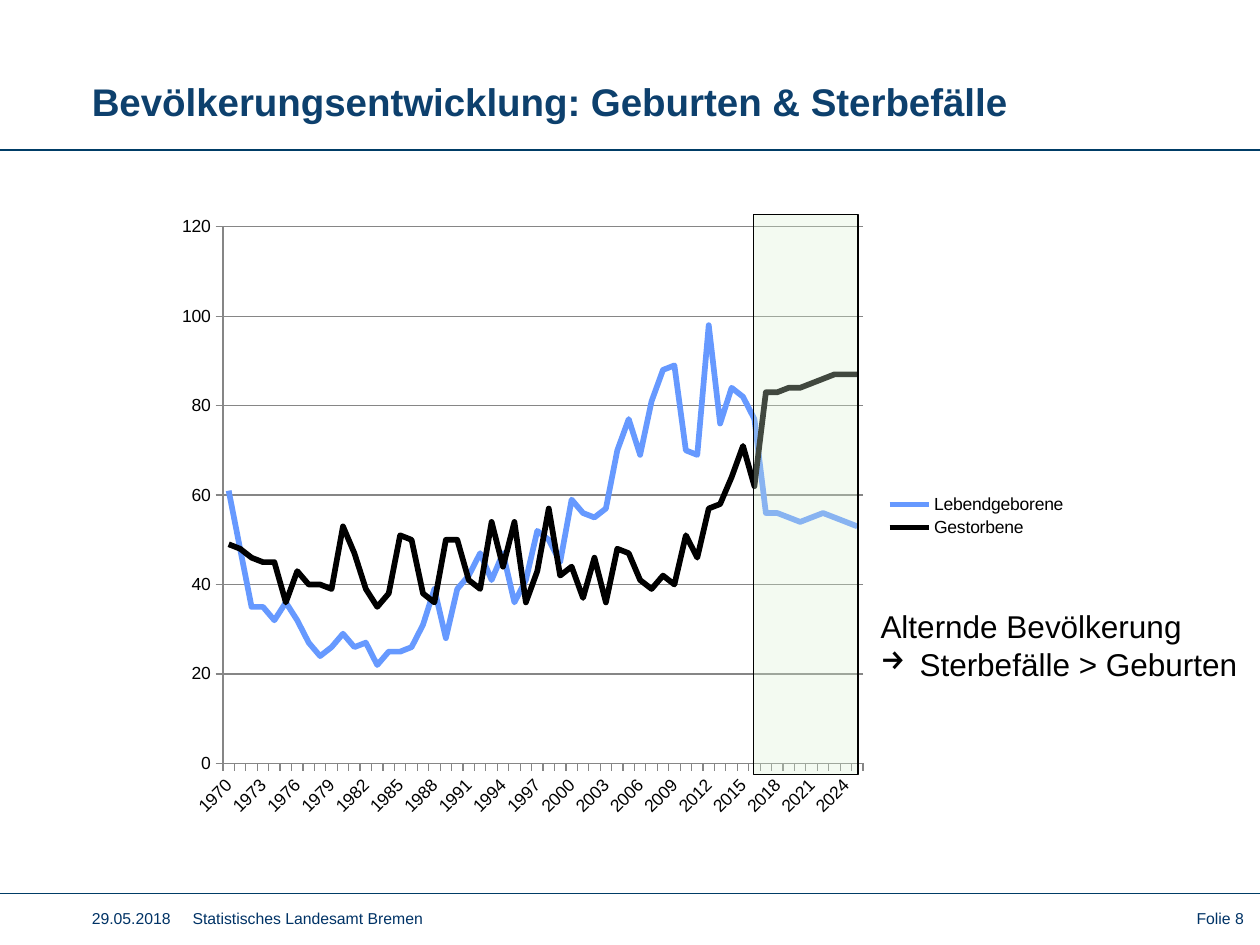
import pptx
import pptx.chart.data
import pptx.dml.color
import pptx.enum.chart
import pptx.enum.shapes
import pptx.enum.text
import pptx.oxml
import pptx.oxml.ns
import pptx.oxml.xmlchemy
import pptx.util

Inches, Pt = pptx.util.Inches, pptx.util.Pt
ALIGN, ANCHOR = pptx.enum.text.PP_ALIGN, pptx.enum.text.MSO_ANCHOR
qn, new_element = pptx.oxml.ns.qn, pptx.oxml.xmlchemy.OxmlElement

THEME = {
    "font": "Arial",
    "title": "0D406D", "rule": "003D66", "footer": "003366",
    "text": "000000", "grid": "868686", "forecast": "D8F0D2",
    "title_size": 22, "note_size": 18, "chart_size": 10, "footer_size": 9,
    "thin": 0.75, "thick": 3.25,
}
TITLE_FORMAT = {"size": THEME["title_size"], "color": THEME["title"], "bold": True}
NOTE_FORMAT = {"size": THEME["note_size"], "color": THEME["text"]}
CHART_FORMAT = {"size": THEME["chart_size"], "color": THEME["text"]}
FOOTER_FORMAT = {"size": THEME["footer_size"], "color": THEME["footer"]}

TITLE = "Bevölkerungsentwicklung: Geburten & Sterbefälle"
FOOTERS = [  # text, box, alignment
    ("29.05.2018", (0.63, 7.16, 0.85, 0.28), ALIGN.LEFT),
    ("Statistisches Landesamt Bremen", (1.43, 7.16, 5.26, 0.28), ALIGN.LEFT),
    ("Folie 8", (9.1, 7.16, 0.87, 0.28), ALIGN.RIGHT),
]
NOTE = ["Alternde Bevölkerung", "Sterbefälle > Geburten"]
RULE_HEIGHTS = [1.19, 7.09]

YEARS = range(1970, 2026)
SERIES = [  # name, colour, values per year
    ("Lebendgeborene", "6699FF", [
        61, 48, 35, 35, 32, 36, 32, 27, 24, 26, 29, 26, 27, 22, 25, 25, 26, 31, 39,
        28, 39, 42, 47, 41, 47, 36, 41, 52, 50, 45, 59, 56, 55, 57, 70, 77, 69, 81,
        88, 89, 70, 69, 98, 76, 84, 82, 77, 56, 56, 55, 54, 55, 56, 55, 54, 53]),
    ("Gestorbene", "000000", [
        49, 48, 46, 45, 45, 36, 43, 40, 40, 39, 53, 47, 39, 35, 38, 51, 50, 38, 36,
        50, 50, 41, 39, 54, 44, 54, 36, 43, 57, 42, 44, 37, 46, 36, 48, 47, 41, 39,
        42, 40, 51, 46, 57, 58, 64, 71, 62, 83, 83, 84, 84, 85, 86, 87, 87, 87]),
]
CHART_BOX = (1.3, 1.62, 7.24, 4.95)
PLOT_BOX = (1.77, 1.8, 5.08, 4.26)
LEGEND_BOX = (7.0, 3.9, 1.5, 0.39)
FORECAST_BOX = (5.98, 1.7, 0.83, 4.45)


def rgb(value):
    return pptx.dml.color.RGBColor.from_string(value)


def inches(box):
    return [Inches(length) for length in box]


def set_font(font, style):
    font.color.rgb = rgb(style["color"])
    values = {"name": THEME["font"], "size": Pt(style["size"]),
              "bold": style.get("bold", False)}
    for name, value in values.items():
        setattr(font, name, value)


def set_line(line, color, width):
    line.color.rgb = rgb(color)
    line.width = Pt(width)


def add_text(slide, lines, box, style, align=ALIGN.LEFT, anchor=ANCHOR.TOP, wrap=True):
    frame = slide.shapes.add_textbox(*inches(box)).text_frame
    frame.word_wrap = wrap
    frame.vertical_anchor = anchor
    frame.text = "\n".join(lines)
    for paragraph in frame.paragraphs:
        paragraph.alignment = align
        set_font(paragraph.runs[0].font, style)
    return frame


def add_arrow_bullet(paragraph):
    properties = paragraph._p.get_or_add_pPr()
    indent = Inches(0.31)
    properties.set("marL", str(indent))
    properties.set("indent", str(-indent))
    bullet = new_element("a:buChar")
    bullet.set("char", "→")
    properties.append(bullet)


def add_rule(slide, height):
    rule = slide.shapes.add_connector(
        pptx.enum.shapes.MSO_CONNECTOR.STRAIGHT, *inches((0, height, 10, height)))
    set_line(rule.line, THEME["rule"], THEME["thin"])
    rule._element.spPr.append(new_element("a:effectLst"))


def manual_layout(box, target=""):
    """Layout element that places a chart part at a slide position."""
    left, top, width, height = CHART_BOX
    shares = {"x": (box[0] - left) / width, "y": (box[1] - top) / height,
              "w": box[2] / width, "h": box[3] / height}
    modes = '<c:xMode val="edge"/><c:yMode val="edge"/>'
    places = "".join(f'<c:{k} val="{v:.4f}"/>' for k, v in shares.items())
    return pptx.oxml.parse_xml(
        f'<c:layout {pptx.oxml.ns.nsdecls("c")}><c:manualLayout>'
        f"{target}{modes}{places}</c:manualLayout></c:layout>")


def place_part(part, layout, index):
    for old in part.findall(qn("c:layout")):
        part.remove(old)
    part.insert(index, layout)


def add_births_deaths_chart(slide):
    data = pptx.chart.data.CategoryChartData()
    data.categories = [str(year) for year in YEARS]
    for name, _, values in SERIES:
        data.add_series(name, values)
    chart = slide.shapes.add_chart(
        pptx.enum.chart.XL_CHART_TYPE.LINE, *inches(CHART_BOX), data).chart
    set_font(chart.font, CHART_FORMAT)
    chart.has_title = False
    chart.has_legend = True
    chart.legend.position = pptx.enum.chart.XL_LEGEND_POSITION.RIGHT
    chart.legend.include_in_layout = False
    chart.plots[0].vary_by_categories = False

    for series, (_, color, _) in zip(chart.plots[0].series, SERIES):
        series.smooth = False
        set_line(series.format.line, color, THEME["thick"])
        series.marker.style = pptx.enum.chart.XL_MARKER_STYLE.NONE

    years, counts = chart.category_axis, chart.value_axis
    for axis in (years, counts):
        axis.major_tick_mark = pptx.enum.chart.XL_TICK_MARK.OUTSIDE
        set_line(axis.format.line, THEME["grid"], THEME["thin"])
        set_font(axis.tick_labels.font, CHART_FORMAT)
    for name, value in {"minimum_scale": 0, "maximum_scale": 120,
                        "major_unit": 20, "has_major_gridlines": True}.items():
        setattr(counts, name, value)
    set_line(counts.major_gridlines.format.line, THEME["grid"], THEME["thin"])

    year_axis = years._element
    year_axis.find(qn("c:txPr")).find(qn("a:bodyPr")).set("rot", "-2700000")
    last = year_axis.find(qn("c:noMultiLvlLbl"))
    for tag, step in (("c:tickLblSkip", 3), ("c:tickMarkSkip", 1)):
        skip = new_element(tag)
        skip.set("val", str(step))
        last.addprevious(skip)

    inner = '<c:layoutTarget val="inner"/>'
    place_part(year_axis.getparent(), manual_layout(PLOT_BOX, inner), 0)
    place_part(chart.legend._element, manual_layout(LEGEND_BOX), 1)


def add_forecast_band(slide):
    band = slide.shapes.add_shape(
        pptx.enum.shapes.MSO_SHAPE.RECTANGLE, *inches(FORECAST_BOX))
    band.shadow.inherit = False
    band.fill.solid()
    band.fill.fore_color.rgb = rgb(THEME["forecast"])
    set_line(band.line, THEME["text"], THEME["thin"])
    alpha = new_element("a:alpha")
    alpha.set("val", "30000")
    band._element.spPr.find(qn("a:solidFill"))[0].append(alpha)


def main():
    deck = pptx.Presentation()
    deck.slide_width, deck.slide_height = inches((10, 7.5))
    slide = deck.slides.add_slide(deck.slide_layouts[6])

    for height in RULE_HEIGHTS:
        add_rule(slide, height)
    add_text(slide, [TITLE], (0.63, 0.44, 7.91, 0.73), TITLE_FORMAT,
             anchor=ANCHOR.MIDDLE)
    for text, box, align in FOOTERS:
        add_text(slide, [text], box, FOOTER_FORMAT, align)
    add_births_deaths_chart(slide)
    note = add_text(slide, NOTE, (6.89, 4.77, 3.2, 0.71), NOTE_FORMAT, wrap=False)
    add_arrow_bullet(note.paragraphs[1])
    add_forecast_band(slide)
    deck.save("out.pptx")


if __name__ == "__main__":
    main()
